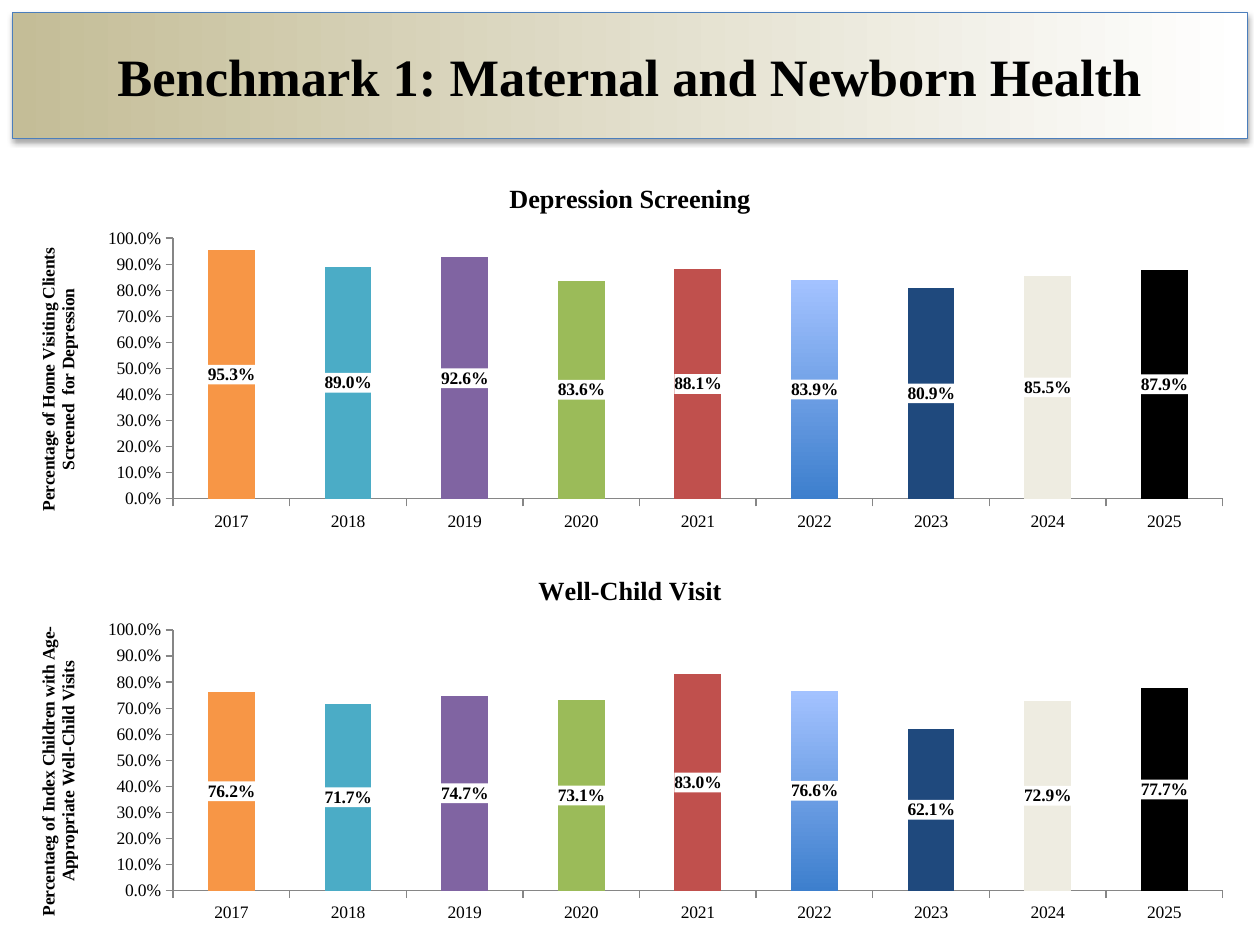
from dataclasses import dataclass

from lxml.etree import _Element
from pptx import Presentation
from pptx.chart.data import CategoryChartData
from pptx.dml.color import RGBColor
from pptx.enum.chart import XL_CHART_TYPE, XL_LABEL_POSITION, XL_TICK_MARK
from pptx.enum.shapes import MSO_SHAPE
from pptx.enum.text import MSO_ANCHOR, PP_ALIGN
from pptx.oxml import parse_xml
from pptx.oxml.ns import nsdecls, qn
from pptx.util import Inches, Pt

BLACK = RGBColor(0x00, 0x00, 0x00)
WHITE = RGBColor(0xFF, 0xFF, 0xFF)
TAN = RGBColor(0xC4, 0xBD, 0x97)
BORDER_BLUE = RGBColor(0x4B, 0x7E, 0xBC)
AXIS_GRAY = RGBColor(0x86, 0x86, 0x86)
SERIES_BLUE = RGBColor(0x4F, 0x81, 0xBD)
GRADIENT_BOTTOM = RGBColor(0x3D, 0x7F, 0xCD)
GRADIENT_TOP = RGBColor(0xA3, 0xC2, 0xFF)
ORANGE = RGBColor(0xF7, 0x96, 0x46)
TEAL = RGBColor(0x4B, 0xAC, 0xC6)
PURPLE = RGBColor(0x80, 0x64, 0xA2)
GREEN = RGBColor(0x9B, 0xBB, 0x59)
RED = RGBColor(0xC0, 0x50, 0x4D)
NAVY = RGBColor(0x1F, 0x49, 0x7D)
CREAM = RGBColor(0xEE, 0xEC, 0xE1)

FONT = "Times New Roman"
YEARS = [str(year) for year in range(2017, 2026)]
BAR_COLORS = [ORANGE, TEAL, PURPLE, GREEN, RED, None, NAVY, CREAM, BLACK]
LEFT, WIDTH = Inches(0.1), Inches(9.8)
BANNER_TOP, BANNER_HEIGHT = Inches(0.1), Inches(1)
CHART_HEIGHT = Inches(3)


@dataclass
class Measure:
    """A yearly percentage shown as one column chart."""
    title: str
    axis_title: str
    top: float
    values: list[float]


MEASURES = [
    Measure("Depression Screening",
            "Percentage of Home Visiting Clients Screened  for Depression", 1.29,
            [0.953, 0.89, 0.926, 0.836, 0.881, 0.839, 0.809, 0.855, 0.879]),
    Measure("Well-Child Visit",
            "Percentaeg of Index Children with Age-Appropriate Well-Child Visits", 4.4,
            [0.762, 0.717, 0.747, 0.731, 0.83, 0.766, 0.621, 0.729, 0.777]),
]


def style_font(font, size: float = 10, bold: bool = False) -> None:
    """Apply the slide's typeface and text colour."""
    font.name, font.size, font.bold = FONT, Pt(size), bold
    font.color.rgb = BLACK


def write(tf, text: str, *, size: float = 10, bold: bool = True) -> None:
    """Put one centred, formatted line of text in a text frame."""
    p = tf.paragraphs[0]
    p.alignment = PP_ALIGN.CENTER
    r = p.add_run()
    r.text = text
    style_font(r.font, size, bold)


def fill_gradient(fill, start: RGBColor, end: RGBColor, angle: float) -> None:
    """Fill with a two-colour linear gradient."""
    fill.gradient()
    fill.gradient_angle = angle
    for stop, color in zip(fill.gradient_stops, (start, end)):
        stop.color.rgb = color


def add_banner(s, text: str) -> None:
    """Draw the shadowed gradient banner and its title."""
    sp = s.shapes.add_shape(MSO_SHAPE.RECTANGLE, LEFT, BANNER_TOP, WIDTH, BANNER_HEIGHT)
    fill_gradient(sp.fill, TAN, WHITE, 0)
    sp.line.color.rgb = BORDER_BLUE
    sp.line.width = Pt(0.75)
    sp.shadow.inherit = False
    sp._element.spPr.find(qn("a:effectLst")).append(parse_xml(
        f'<a:outerShdw {nsdecls("a")} blurRad="40000" dist="23000" dir="5400000" rotWithShape="0">'
        '<a:srgbClr val="000000"><a:alpha val="35000"/></a:srgbClr></a:outerShdw>'))
    tf = s.shapes.add_textbox(LEFT, BANNER_TOP, WIDTH, BANNER_HEIGHT).text_frame
    tf.word_wrap = True
    tf.vertical_anchor = MSO_ANCHOR.MIDDLE
    write(tf, text, size=30)


def place_plot(plot_area: _Element) -> None:
    """Fix the inner plot area as fractions of the chart."""
    for layout in plot_area.findall(qn("c:layout")):
        plot_area.remove(layout)
    box = {"x": 0.13, "y": 0.2, "w": 0.85, "h": 0.69}
    modes = "".join(f'<c:{k}Mode val="edge"/>' for k in "xy")
    sizes = "".join(f'<c:{k} val="{v}"/>' for k, v in box.items())
    plot_area.insert(0, parse_xml(
        f'<c:layout {nsdecls("c")}><c:manualLayout><c:layoutTarget val="inner"/>'
        f'{modes}{sizes}</c:manualLayout></c:layout>'))


def style_axis(axis) -> None:
    """Give an axis outside ticks, a thin gray line and no gridlines."""
    axis.has_major_gridlines = False
    axis.major_tick_mark = XL_TICK_MARK.OUTSIDE
    axis.minor_tick_mark = XL_TICK_MARK.NONE
    axis.format.line.color.rgb = AXIS_GRAY
    axis.format.line.width = Pt(0.75)
    style_font(axis.tick_labels.font)


def add_labels(plot) -> None:
    """Show bold percentages on white in the middle of the columns."""
    plot.has_data_labels = True
    labels = plot.data_labels
    labels.show_value = True
    labels.number_format, labels.number_format_is_linked = "0.0%", False
    labels.position = XL_LABEL_POSITION.CENTER
    style_font(labels.font, bold=True)
    labels._element.find(qn("c:numFmt")).addnext(parse_xml(
        f'<c:spPr {nsdecls("c", "a")}><a:solidFill><a:srgbClr val="FFFFFF"/></a:solidFill></c:spPr>'))


def add_measure(s, measure: Measure) -> None:
    """Draw one measure as a column chart."""
    data = CategoryChartData(number_format="0.0%")
    data.categories = YEARS
    data.add_series("Series 1", measure.values)
    chart = s.shapes.add_chart(XL_CHART_TYPE.COLUMN_CLUSTERED, LEFT, Inches(measure.top),
                               WIDTH, CHART_HEIGHT, data).chart
    chart.has_legend = False
    chart.font.name, chart.font.size = "Calibri", Pt(10)
    chart.font.color.rgb = BLACK
    write(chart.chart_title.text_frame, measure.title, size=15)
    chart.chart_title.include_in_layout = False
    place_plot(chart._chartSpace.chart.plotArea)

    style_axis(chart.category_axis)
    axis = chart.value_axis
    style_axis(axis)
    axis.minimum_scale, axis.maximum_scale, axis.major_unit = 0, 1, 0.1
    axis.tick_labels.number_format = "0.0%"
    axis.tick_labels.number_format_is_linked = False
    write(axis.axis_title.text_frame, measure.axis_title)

    plot = chart.plots[0]
    plot.gap_width = 150
    plot.vary_by_categories = False
    add_labels(plot)
    series = plot.series[0]
    series.format.fill.solid()
    series.format.fill.fore_color.rgb = SERIES_BLUE
    for i, color in enumerate(BAR_COLORS):
        fill = series.points[i].format.fill
        if color is None:
            fill_gradient(fill, GRADIENT_BOTTOM, GRADIENT_TOP, 90)
        else:
            fill.solid()
            fill.fore_color.rgb = color


def main() -> None:
    """Build and save the slide."""
    prs = Presentation()
    prs.slide_width, prs.slide_height = Inches(10), Inches(7.5)
    s = prs.slides.add_slide(prs.slide_layouts[6])
    add_banner(s, "Benchmark 1: Maternal and Newborn Health")
    for measure in MEASURES:
        add_measure(s, measure)
    prs.save("out.pptx")


if __name__ == "__main__":
    main()
